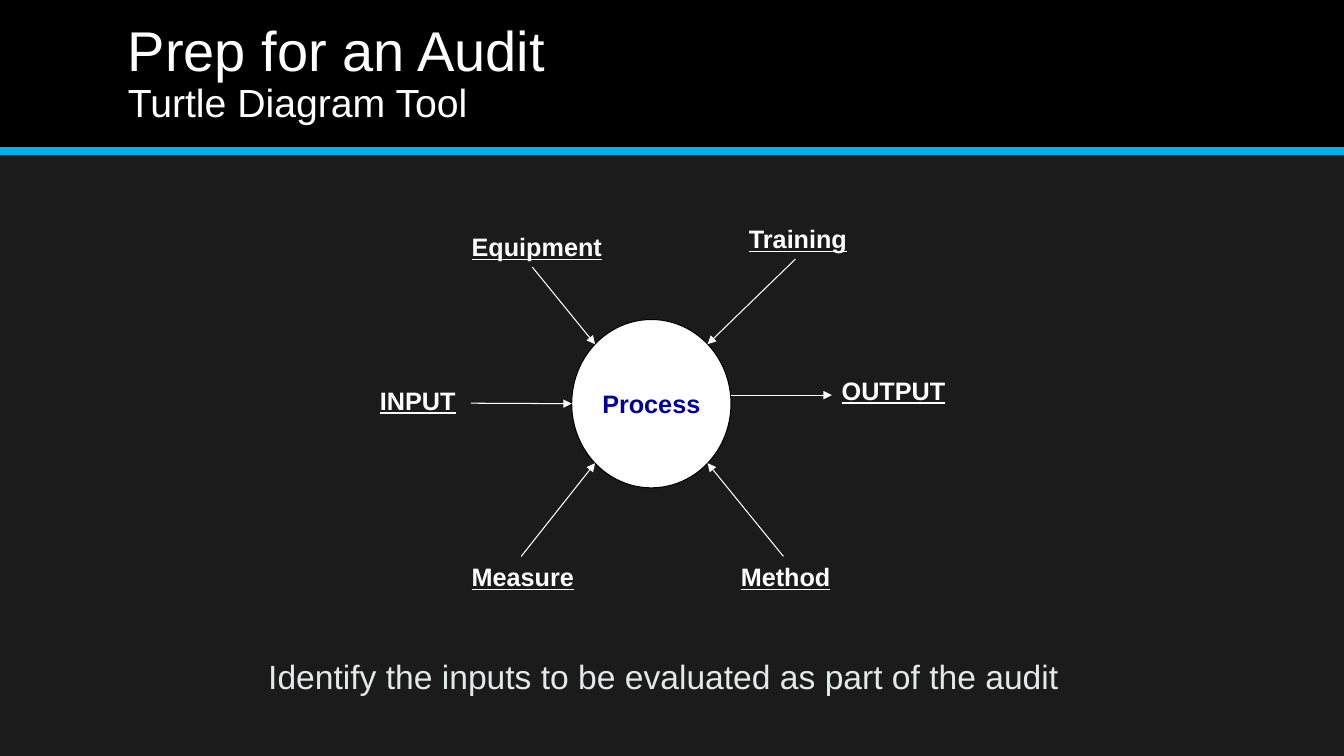
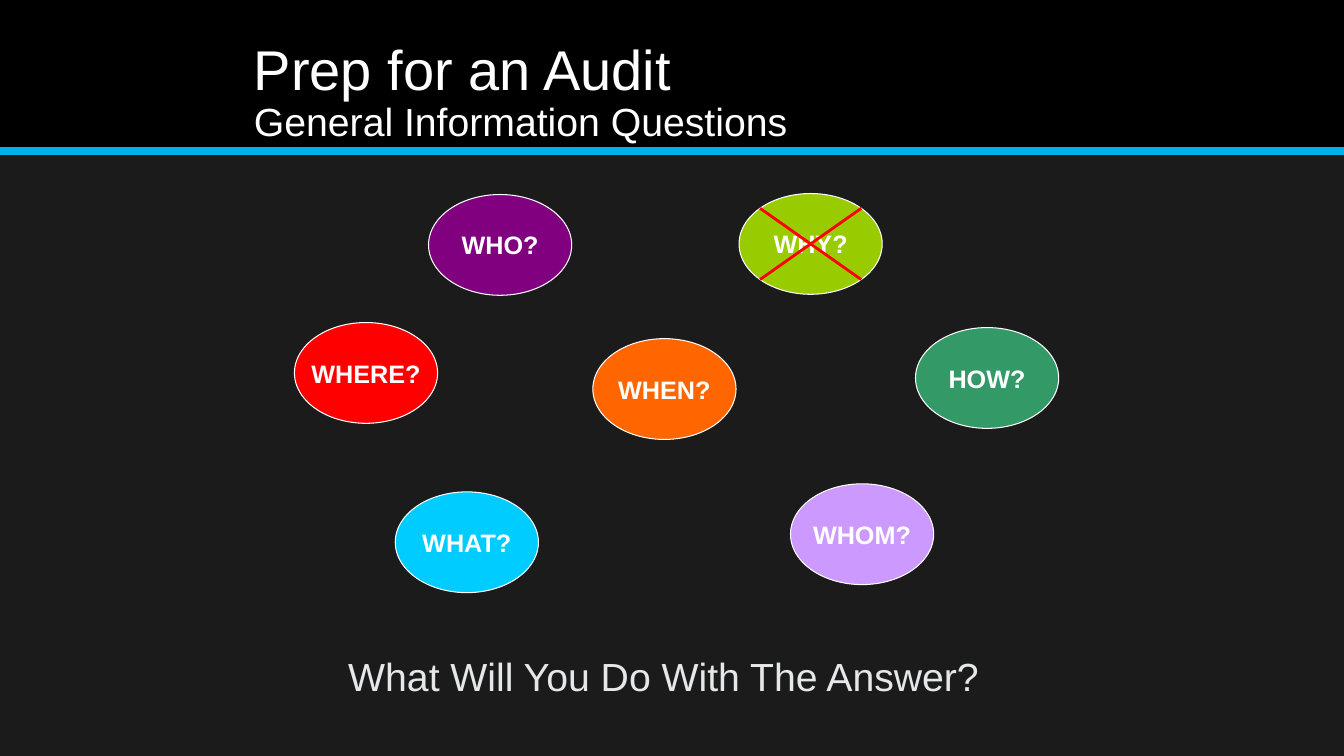
import dataclasses
import math

import pptx
import pptx.dml.color
import pptx.enum.shapes
import pptx.enum.text
import pptx.oxml
import pptx.oxml.ns
import pptx.util

EMU_PER_PX = 9144
SLIDE_BOX = (0, 0, 1333, 750)
CAPTION_BOX = (208, 608, 900, 125)
MIDDLE = pptx.enum.text.MSO_ANCHOR.MIDDLE
TOP = pptx.enum.text.MSO_ANCHOR.TOP
CENTER = pptx.enum.text.PP_ALIGN.CENTER
LEFT = pptx.enum.text.PP_ALIGN.LEFT
RECTANGLE = pptx.enum.shapes.MSO_SHAPE.RECTANGLE
OVAL = pptx.enum.shapes.MSO_SHAPE.OVAL


@dataclasses.dataclass(frozen=True)
class Theme:
    """Colours, type sizes and line widths of the deck."""
    font: str = "Arial"
    background: str = "1B1B1B"
    band: str = "000000"
    accent: str = "00B0EA"
    light: str = "FFFFFF"
    caption: str = "E5E8E8"
    process: str = "000099"
    cross: str = "FF0000"
    title_size: int = 40
    subtitle_size: int = 28
    label_size: int = 18
    thin: float = 0.75
    cross_width: float = 2
    accent_width: float = 6


THEME = Theme()


def px(length):
    """Turn px into EMU."""
    return pptx.util.Emu(round(length * EMU_PER_PX))


def rgb(color):
    """Turn a hex string into a colour."""
    return pptx.dml.color.RGBColor.from_string(color)


def add_run(paragraph, words, size, color, bold=None, underline=None):
    """Add one styled run to a paragraph."""
    run = paragraph.add_run()
    run.text = words
    run.font.name = THEME.font
    run.font.size = pptx.util.Pt(size)
    run.font.color.rgb = rgb(color)
    run.font.bold = bold
    run.font.underline = underline


def add_text_box(slide, box, anchor=MIDDLE, align=LEFT, wrap=True):
    """Add an empty text box and return its first paragraph."""
    frame = slide.shapes.add_textbox(*map(px, box)).text_frame
    frame.word_wrap = wrap
    frame.vertical_anchor = anchor
    paragraph = frame.paragraphs[0]
    paragraph.alignment = align
    return paragraph


def add_line(slide, start, end, color, width, arrow=False):
    """Draw a straight line, with an arrowhead at its end if asked."""
    line = slide.shapes.add_connector(
        pptx.enum.shapes.MSO_CONNECTOR.STRAIGHT, *map(px, (*start, *end)))
    line.line.color.rgb = rgb(color)
    line.line.width = pptx.util.Pt(width)
    if arrow:
        head = pptx.oxml.parse_xml(
            f'<a:tailEnd {pptx.oxml.ns.nsdecls("a")} type="triangle"/>')
        line.line._get_or_add_ln().append(head)
    line._element.spPr.append(
        pptx.oxml.parse_xml(f'<a:effectLst {pptx.oxml.ns.nsdecls("a")}/>'))


def add_filled(slide, kind, box, fill, outline=None):
    """Add a filled preset shape, outlined if a colour is given."""
    shape = slide.shapes.add_shape(kind, *map(px, box))
    shape.shadow.inherit = False
    shape.fill.solid()
    shape.fill.fore_color.rgb = rgb(fill)
    if outline:
        shape.line.color.rgb = rgb(outline)
        shape.line.width = pptx.util.Pt(THEME.thin)
    else:
        shape.line.fill.background()
    return shape


def add_bubble(slide, box, words, fill, outline, color):
    """Add an ellipse with a bold centred word."""
    frame = add_filled(slide, OVAL, box, fill, outline).text_frame
    frame.word_wrap = False
    frame.vertical_anchor = MIDDLE
    frame.paragraphs[0].alignment = CENTER
    add_run(frame.paragraphs[0], words, THEME.label_size, color, bold=True)


def rim_point(box, degrees):
    """Find the point of an ellipse at an angle, clockwise from the right."""
    left, top, width, height = box
    angle = math.radians(degrees)
    return (left + width / 2 * (1 + math.cos(angle)),
            top + height / 2 * (1 + math.sin(angle)))


def add_header(slide, box, title_box, title, subtitle):
    """Draw the top band with its accent line and two-line title."""
    left, top, width, height = box
    add_filled(slide, RECTANGLE, box, THEME.band)
    add_line(slide, (left, top + height), (left + width, top + height),
             THEME.accent, THEME.accent_width)
    heading = add_text_box(slide, title_box)
    heading.line_spacing = 0.9
    add_run(heading, title, THEME.title_size, THEME.light)
    heading.add_line_break()
    add_run(heading, subtitle, THEME.subtitle_size, THEME.light)


def add_caption(slide, box, words, size):
    """Write the centred closing line."""
    add_run(add_text_box(slide, box, align=CENTER), words, size, THEME.caption)


def add_turtle(slide, box):
    """Draw the process circle with its labels and arrows."""
    left, top = box[:2]
    process = (left + 200, top + 100, 158, 167)
    labels = [
        ("INPUT", 0, 160, 95),
        ("OUTPUT", 458, 150, 123),
        ("Equipment", 91, 8, 149),
        ("Training", 366, 0, 119),
        ("Measure", 91, 335, 122),
        ("Method", 358, 335, 109),
    ]
    for words, x, y, width in labels:
        label = add_text_box(slide, (left + x, top + y, width, 40),
                             anchor=TOP, wrap=False)
        add_run(label, words, THEME.label_size, THEME.light,
                bold=True, underline=True)
    add_bubble(slide, process, "Process", THEME.light, THEME.band, THEME.process)
    inflows = [(422, 40, 315), (161, 48, 225), (150, 335, 135),
               (410, 335, 45), (100, 183, 180)]
    for x, y, degrees in inflows:
        add_line(slide, (left + x, top + y), rim_point(process, degrees),
                 THEME.light, THEME.thin, arrow=True)
    add_line(slide, (left + 358, top + 175), (left + 458, top + 175),
             THEME.light, THEME.thin, arrow=True)


def add_questions(slide, box):
    """Scatter the question bubbles and cross out the unwanted one."""
    left, top = box[:2]
    questions = [
        ("WHO?", 133, 1, "800080"),
        ("WHY?", 441, 0, "99CC00"),
        ("WHEN?", 296, 144, "FF6600"),
        ("WHERE?", 0, 128, "FF0000"),
        ("HOW?", 616, 133, "339966"),
        ("WHAT?", 100, 296, "00CCFF"),
        ("WHOM?", 492, 288, "CC99FF"),
    ]
    bubbles = {}
    for words, x, y, fill in questions:
        bubbles[words] = (left + x, top + y, 142, 100)
        add_bubble(slide, bubbles[words], words, fill, THEME.light, THEME.light)
    for degrees in (225, 135):
        add_line(slide, rim_point(bubbles["WHY?"], degrees),
                 rim_point(bubbles["WHY?"], degrees + 180),
                 THEME.cross, THEME.cross_width)


def build_slide(deck, title_box, subtitle, add_body, body_box, caption, size):
    """Build one slide from header, body and caption."""
    slide = deck.slides.add_slide(deck.slide_layouts[6])
    add_header(slide, (0, 0, SLIDE_BOX[2], 150), title_box,
               "Prep for an Audit", subtitle)
    add_body(slide, body_box)
    add_caption(slide, CAPTION_BOX, caption, size)


def main():
    """Build the deck and save it."""
    deck = pptx.Presentation()
    deck.slide_width, deck.slide_height = map(px, SLIDE_BOX[2:])
    backdrop = deck.slide_master.background.fill
    backdrop.solid()
    backdrop.fore_color.rgb = rgb(THEME.background)
    build_slide(deck, (117, 14, 1100, 120), "Turtle Diagram Tool",
                add_turtle, (367, 217, 581, 375),
                "Identify the inputs to be evaluated as part of the audit", 24)
    build_slide(deck, (242, 8, 849, 170), "General Information Questions",
                add_questions, (292, 192, 758, 396),
                "What Will You Do With The Answer?", 28)
    deck.save("out.pptx")


if __name__ == "__main__":
    main()
